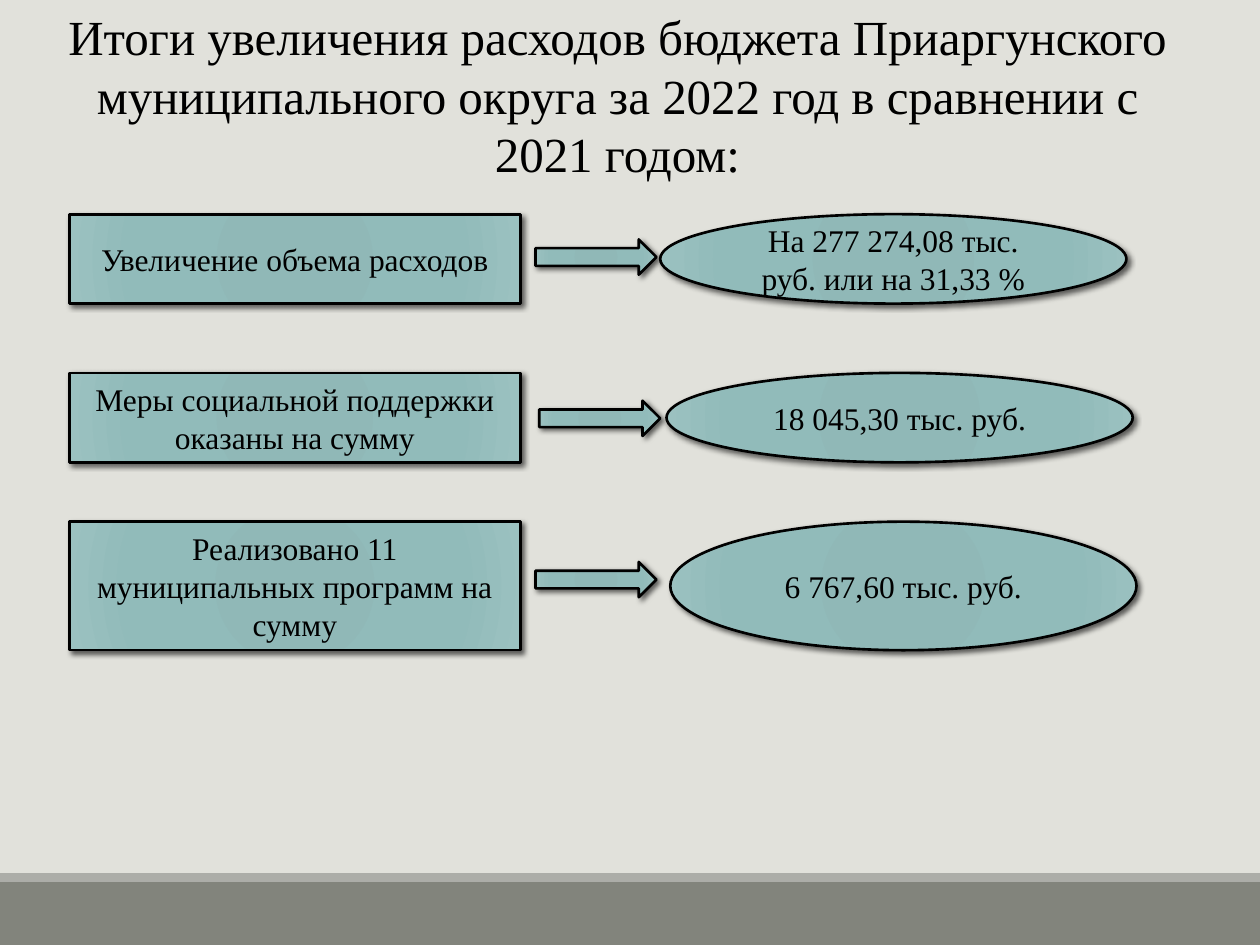
import pptx
import pptx.util
import pptx.dml.color
import pptx.enum.shapes
import pptx.enum.text
import pptx.oxml
import pptx.oxml.ns
from pptx.util import Inches, Pt

# Content
TITLE = ("Итоги увеличения расходов бюджета Приаргунского "
         "муниципального округа за 2022 год в сравнении с 2021 годом:")
# label, result, top, height, arrow left, arrow top, ellipse left
ROWS = [
    ("Увеличение объема расходов", "На 277 274,08 тыс. руб. или на 31,33 %",
     1.7, 0.71, 4.25, 1.9, 5.24),
    ("Меры социальной поддержки оказаны на сумму", "18 045,30 тыс. руб.",
     2.96, 0.71, 4.28, 3.18, 5.29),
    ("Реализовано 11 муниципальных программ на сумму", "6 767,60 тыс. руб.",
     4.14, 1.02, 4.25, 4.46, 5.32),
]
BANDS = [(7, 0.5, "82847C"), (6.93, 0.07, "ACADA8")]
STOPS = [(0, "8EB7B6"), (34, "90B8B7"), (70, "91BBBA"), (100, "9BC1C0")]
FONT = "Times New Roman"
SHAPE = pptx.enum.shapes.MSO_SHAPE
ANCHOR = pptx.enum.text.MSO_ANCHOR
NS = pptx.oxml.ns.nsdecls("a")

GRADIENT = (
    f"<a:gradFill {NS} rotWithShape='1'><a:gsLst>"
    + "".join(f"<a:gs pos='{pos * 1000}'><a:srgbClr val='{c}'/></a:gs>" for pos, c in STOPS)
    + "</a:gsLst><a:path path='circle'>"
    "<a:fillToRect l='100000' t='100000' r='100000' b='100000'/>"
    "</a:path></a:gradFill>")
SHADOW = (
    f"<a:effectLst {NS}><a:outerShdw blurRad='{Pt(3)}' dist='{Pt(2)}' dir='2700000' "
    "algn='tl' rotWithShape='0'><a:srgbClr val='000000'><a:alpha val='60000'/>"
    "</a:srgbClr></a:outerShdw></a:effectLst>")


def paint(color_format, value):
    color_format.rgb = pptx.dml.color.RGBColor.from_string(value)


def write(shape, text, size, anchor):
    tf = shape.text_frame
    tf.word_wrap = True
    tf.vertical_anchor = anchor
    p = tf.paragraphs[0]
    p.alignment = pptx.enum.text.PP_ALIGN.CENTER
    r = p.add_run()
    r.text = text
    r.font.name = FONT
    r.font.size = Pt(size)
    paint(r.font.color, "000000")


def add_shape(s, kind, left, top, width, height):
    sp = s.shapes.add_shape(kind, Inches(left), Inches(top), Inches(width), Inches(height))
    sp.shadow.inherit = False
    return sp


def add_block(s, kind, left, top, width, height, text=None):
    sp = add_shape(s, kind, left, top, width, height)
    paint(sp.line.color, "000000")
    sp.line.width = Pt(1.5)
    # Gradient follows the geometry; the shadow replaces the empty effect list
    props = sp._element.spPr
    props.find(pptx.oxml.ns.qn("a:prstGeom")).addnext(pptx.oxml.parse_xml(GRADIENT))
    props.replace(props.find(pptx.oxml.ns.qn("a:effectLst")), pptx.oxml.parse_xml(SHADOW))
    if text:
        write(sp, text, 18, ANCHOR.MIDDLE)


def main():
    prs = pptx.Presentation()
    prs.slide_width, prs.slide_height = Inches(10), Inches(7.5)
    s = prs.slides.add_slide(prs.slide_layouts[5])
    s.background.fill.solid()
    paint(s.background.fill.fore_color, "E1E1DB")

    # Footer bands
    for top, height, color in BANDS:
        band = add_shape(s, SHAPE.RECTANGLE, 0, top, 10, height)
        band.fill.solid()
        paint(band.fill.fore_color, color)
        band.line.fill.background()

    # Title
    title = s.shapes.title
    title.left, title.top = Inches(0.35), Inches(0)
    title.width, title.height = Inches(9.1), Inches(1.51)
    write(title, TITLE, 28, ANCHOR.TOP)

    # Rows: label, arrow, result
    for label, result, top, height, arrow_left, arrow_top, oval_left in ROWS:
        add_block(s, SHAPE.RECTANGLE, 0.55, top, 3.58, height, label)
        add_block(s, SHAPE.RIGHT_ARROW, arrow_left, arrow_top, 0.96, 0.28)
        add_block(s, SHAPE.OVAL, oval_left, top, 3.7, height, result)

    prs.save("out.pptx")


if __name__ == "__main__":
    main()
